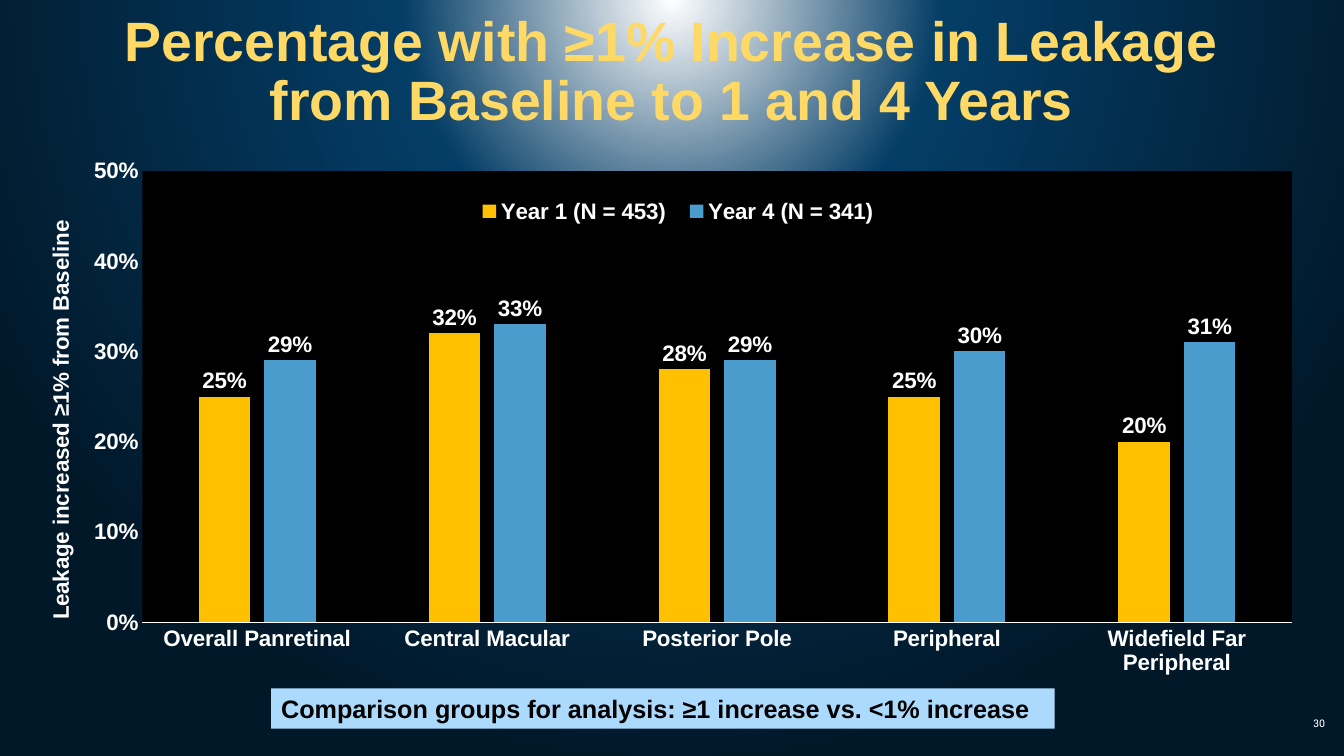
from dataclasses import dataclass

from lxml.etree import SubElement
from pptx import Presentation
from pptx.chart.data import CategoryChartData
from pptx.dml.color import RGBColor
from pptx.enum.chart import XL_CHART_TYPE as ChartType
from pptx.enum.chart import XL_LABEL_POSITION as LabelPosition
from pptx.enum.chart import XL_LEGEND_POSITION as LegendPosition
from pptx.enum.chart import XL_TICK_MARK as TickMark
from pptx.enum.text import MSO_ANCHOR as Anchor
from pptx.enum.text import PP_ALIGN as Align
from pptx.oxml import parse_xml
from pptx.oxml.ns import nsdecls, qn
from pptx.util import Inches, Pt


@dataclass(frozen=True)
class Theme:
    font: str = "Arial"
    number_font: str = "Roboto Slab"
    title: str = "FFD966"
    light: str = "FFFFFF"
    dark: str = "000000"
    note_fill: str = "ABDAFC"
    year_1: str = "FFC000"
    year_4: str = "4A9CCC"
    glow: tuple = ((0, "FFFFFF"), (35, "043D66"), (100, "011829"))
    title_size: float = 39.6
    chart_size: float = 16
    note_size: float = 18
    number_size: float = 7.5


THEME = Theme()
REGIONS = ["Overall Panretinal", "Central Macular", "Posterior Pole",
           "Peripheral", "Widefield Far Peripheral"]
LEAKAGE = [
    ("Year 1 (N = 453)", (0.25, 0.32, 0.28, 0.25, 0.20), THEME.year_1),
    ("Year 4 (N = 341)", (0.29, 0.33, 0.29, 0.30, 0.31), THEME.year_4),
]


def rgb(color):
    return RGBColor.from_string(color)


def style_font(font, size=THEME.chart_size, color=THEME.light,
               name=THEME.font, bold=True):
    font.size, font.name, font.bold = Pt(size), name, bold
    font.color.rgb = rgb(color)


def add_text(slide, text, box, align=Align.LEFT, anchor=Anchor.TOP,
             spacing=None, fill=None, **font_format):
    frame_box = slide.shapes.add_textbox(*map(Inches, box))
    if fill:
        frame_box.fill.solid()
        frame_box.fill.fore_color.rgb = rgb(fill)
    frame = frame_box.text_frame
    frame.word_wrap = True
    frame.vertical_anchor = anchor
    paragraph = frame.paragraphs[0]
    paragraph.alignment = align
    if spacing:
        paragraph.line_spacing = spacing
    run = paragraph.add_run()
    run.text = text
    style_font(run.font, **font_format)


def set_glow_background(slide):
    stops = "".join(
        f'<a:gs pos="{percent * 1000}"><a:srgbClr val="{color}"/></a:gs>'
        for percent, color in THEME.glow)
    slide.element.cSld.insert(0, parse_xml(
        f'<p:bg {nsdecls("p", "a")}><p:bgPr><a:gradFill rotWithShape="1">'
        f'<a:gsLst>{stops}</a:gsLst><a:path path="circle">'
        '<a:fillToRect l="50000" t="-80000" r="50000" b="180000"/></a:path>'
        '</a:gradFill><a:effectLst/></p:bgPr></p:bg>'))


def place_in_chart(part, x, y, w=None, h=None, inner=False):
    """Give a chart part a manual layout in fractions of the chart's size."""
    for old in part.findall(qn("c:layout")):
        part.remove(old)
    layout = parse_xml(f'<c:layout {nsdecls("c")}/>')
    manual = SubElement(layout, qn("c:manualLayout"))
    settings = [("layoutTarget", "inner" if inner else None),
                ("xMode", "edge"), ("yMode", "edge"),
                ("x", x), ("y", y), ("w", w), ("h", h)]
    for tag, value in settings:
        if value is not None:
            SubElement(manual, qn(f"c:{tag}")).set("val", str(value))
    overlay = part.find(qn("c:overlay"))
    if overlay is None:
        part.insert(0, layout)
    else:
        overlay.addprevious(layout)


def style_axes(chart):
    regions, percent = chart.category_axis, chart.value_axis
    for axis in (regions, percent):
        axis.major_tick_mark = axis.minor_tick_mark = TickMark.NONE
        axis.has_major_gridlines = False
        style_font(axis.tick_labels.font)
    regions.format.line.color.rgb = rgb(THEME.light)
    regions.format.line.width = Pt(0.75)
    percent.format.line.fill.background()
    percent.minimum_scale, percent.maximum_scale = 0, 0.5
    percent.major_unit = 0.1
    percent.tick_labels.number_format = "0%"
    percent.tick_labels.number_format_is_linked = False

    frame = percent.axis_title.text_frame
    frame.text = "Leakage increased ≥1% from Baseline"
    style_font(frame.paragraphs[0].runs[0].font)
    frame._txBody.bodyPr.set("rot", "-5400000")
    frame._txBody.bodyPr.set("vert", "horz")
    place_in_chart(percent.axis_title._element, 0.01, 0.11)


def style_columns(plot):
    plot.gap_width, plot.overlap = 219, -27
    plot.vary_by_categories = False
    for series, (_, _, color) in zip(plot.series, LEAKAGE):
        series.format.fill.solid()
        series.format.fill.fore_color.rgb = rgb(color)
        labels = series.data_labels
        labels.show_value = True
        labels.position = LabelPosition.OUTSIDE_END
        labels.number_format = "0%"
        labels.number_format_is_linked = False
        style_font(labels.font)


def add_leakage_chart(slide, box):
    leakage = CategoryChartData(number_format="0%")
    leakage.categories = REGIONS
    for name, shares, _ in LEAKAGE:
        leakage.add_series(name, shares)
    chart = slide.shapes.add_chart(
        ChartType.COLUMN_CLUSTERED, *map(Inches, box), leakage).chart
    chart.has_title = False
    style_font(chart.font)
    style_axes(chart)
    style_columns(chart.plots[0])

    chart.has_legend = True
    chart.legend.position = LegendPosition.TOP
    chart.legend.include_in_layout = True
    style_font(chart.legend.font)
    place_in_chart(chart.legend._element, 0.34, 0.06, 0.33, 0.08)

    plot_area = chart._chartSpace.chart.plotArea
    place_in_chart(plot_area, 0.088, 0.024, 0.895, 0.851, inner=True)
    plot_area.append(parse_xml(
        f'<c:spPr {nsdecls("c", "a")}><a:solidFill>'
        f'<a:srgbClr val="{THEME.dark}"/></a:solidFill></c:spPr>'))


def main():
    deck = Presentation()
    deck.slide_width, deck.slide_height = Inches(13.33), Inches(7.5)
    slide = deck.slides.add_slide(deck.slide_layouts[6])
    set_glow_background(slide)
    add_text(slide, "Percentage with ≥1% Increase in Leakage "
             "from Baseline to 1 and 4 Years", (1, 0, 11.32, 1.45),
             align=Align.CENTER, anchor=Anchor.MIDDLE, spacing=0.9,
             size=THEME.title_size, color=THEME.title)
    add_leakage_chart(slide, (0.29, 1.57, 12.74, 5.26))
    add_text(slide, "30", (12.42, 6.98, 0.82, 0.4), align=Align.RIGHT,
             anchor=Anchor.MIDDLE, size=THEME.number_size,
             name=THEME.number_font, bold=False)
    add_text(slide, "Comparison groups for analysis: "
             "≥1 increase vs. <1% increase", (2.69, 6.83, 7.77, 0.4),
             fill=THEME.note_fill, size=THEME.note_size, color=THEME.dark)
    deck.save("out.pptx")


if __name__ == "__main__":
    main()
